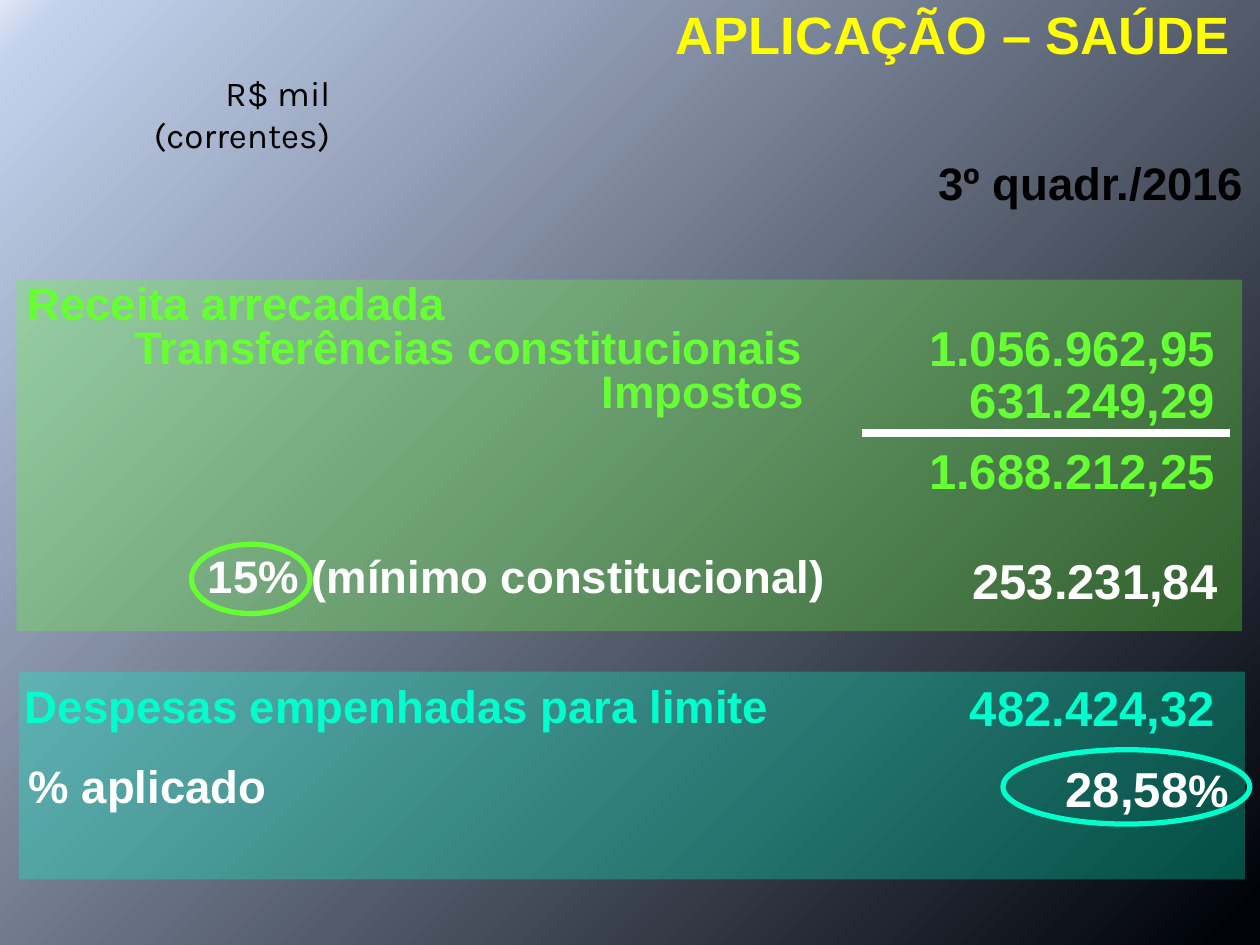
import copy

import pptx
import pptx.dml.color
import pptx.enum.shapes
import pptx.enum.text
import pptx.oxml.ns
import pptx.oxml.xmlchemy
import pptx.util

Inches = pptx.util.Inches
Shapes = pptx.enum.shapes.MSO_SHAPE
Align = pptx.enum.text.PP_ALIGN

COLOURS = {
    "green": "66FF33",
    "teal": "00FFCC",
    "white": "FFFFFF",
    "black": "000000",
    "yellow": "FFFF00",
}
BACKDROP = [(0.02, "00030A"), (0.97, "C2D1ED"), (1, "E1E8F5")]


class HealthSlide:
    """Hold the style and the current slide, with a method per kind of element."""

    label_size = 26
    value_size = 28

    def __init__(self, deck):
        self.page = deck.slides.add_slide(deck.slide_layouts[6])

    def colour(self, name):
        return pptx.dml.color.RGBColor.from_string(COLOURS.get(name, name))

    def backdrop(self, stops, angle):
        fill = self.page.background.fill
        fill.gradient()
        fill.gradient_angle = angle
        first = next(self.page.element.iter(pptx.oxml.ns.qn("a:gs")))
        first.addnext(copy.deepcopy(first))
        for stop, (position, tint) in zip(fill.gradient_stops, stops):
            stop.position = position
            stop.color.rgb = self.colour(tint)

    def shape(self, kind, area):
        shape = self.page.shapes.add_shape(kind, *map(Inches, area))
        shape.shadow.inherit = False
        return shape

    def panel(self, area, name, opacity=29):
        panel = self.shape(Shapes.RECTANGLE, area)
        panel.line.fill.background()
        panel.fill.solid()
        panel.fill.fore_color.rgb = self.colour(name)
        tint = next(panel.element.spPr.iter(pptx.oxml.ns.qn("a:srgbClr")))
        alpha = pptx.oxml.xmlchemy.OxmlElement("a:alpha")
        alpha.set("val", str(opacity * 1000))
        tint.append(alpha)

    def ring(self, area, name):
        ring = self.shape(Shapes.OVAL, area)
        ring.fill.background()
        ring.line.color.rgb = self.colour(name)
        ring.line.width = pptx.util.Pt(3)

    def rule(self, left, right, top, name):
        ends = map(Inches, (left, top, right, top))
        rule = self.page.shapes.add_connector(
            pptx.enum.shapes.MSO_CONNECTOR.STRAIGHT, *ends)
        rule.line.color.rgb = self.colour(name)
        rule.line.width = pptx.util.Pt(4.5)
        properties = rule.line._ln.getparent()
        properties.append(pptx.oxml.xmlchemy.OxmlElement("a:effectLst"))

    def text(self, area, spans, name, align=Align.RIGHT, spacing=None,
             font="Arial", bold=True):
        box = self.page.shapes.add_textbox(*map(Inches, area))
        box.text_frame.word_wrap = True
        box.text_frame.auto_size = pptx.enum.text.MSO_AUTO_SIZE.SHAPE_TO_FIT_TEXT
        para = box.text_frame.paragraphs[0]
        para.alignment = align
        para.line_spacing = spacing
        for words, size in spans:
            span = para.add_run()
            span.text = words
            span.font.color.rgb = self.colour(name)
            formats = {"name": font, "size": pptx.util.Pt(size), "bold": bold}
            for key, value in formats.items():
                setattr(span.font, key, value)

    def label(self, area, words, name, **options):
        self.text(area, [(words, self.label_size)], name, **options)

    def value(self, area, words, name):
        self.text(area, [(words, self.value_size)], name)


def main():
    deck = pptx.Presentation()
    deck.slide_width, deck.slide_height = Inches(10), Inches(7.5)
    page = HealthSlide(deck)
    page.backdrop(BACKDROP, 135)

    page.panel((0.15, 5.33, 9.73, 1.65), "teal")
    page.panel((0.13, 2.22, 9.73, 2.79), "green")

    left = {"align": Align.LEFT}
    labels = [
        ((0.12, 2.25, 4.33, 0.41), "Receita arrecadada", "green",
         {"spacing": 0.7, **left}),
        ((0.9, 2.48, 5.67, 0.53), "Transferências constitucionais ", "green", {}),
        ((4.53, 2.83, 2.05, 0.53), "Impostos ", "green", {}),
        ((0.27, 4.3, 6.38, 0.53), "15% (mínimo constitucional)", "white", {}),
        ((0.1, 5.33, 7.1, 0.53), "Despesas empenhadas para limite", "teal", left),
        ((0.13, 5.97, 5.28, 0.53), "% aplicado", "white", left),
        ((7.13, 1.3, 2.84, 0.41), "3º quadr./2016", "black", {"spacing": 0.7}),
    ]
    for area, words, name, options in labels:
        page.label(area, words, name, **options)

    values = [
        (7.2, 2.47, 2.54, "1.056.962,95", "green"),
        (7.2, 2.88, 2.54, "631.249,29", "green"),
        (7.2, 3.45, 2.54, "1.688.212,25", "green"),
        (7.32, 4.32, 2.44, "253.231,84", "white"),
        (7.3, 5.33, 2.44, "482.424,32", "teal"),
    ]
    for start, top, width, words, name in values:
        page.value((start, top, width, 0.57), words, name)
    page.text((7.96, 5.97, 1.89, 0.57),
              [("28,58", page.value_size), ("%", page.label_size)], "white")

    page.ring((1.52, 4.32, 0.94, 0.55), "green")
    page.ring((7.96, 5.95, 1.96, 0.59), "teal")
    page.text((0.28, 0.52, 2.44, 0.44), [("R$ mil (correntes)", 20)], "black",
              font="Karla", bold=False)
    page.rule(6.84, 9.76, 3.44, "white")
    page.text((0, -0.03, 9.86, 0.61), [("APLICAÇÃO – SAÚDE", 30)], "yellow")

    deck.save("out.pptx")


if __name__ == "__main__":
    main()
